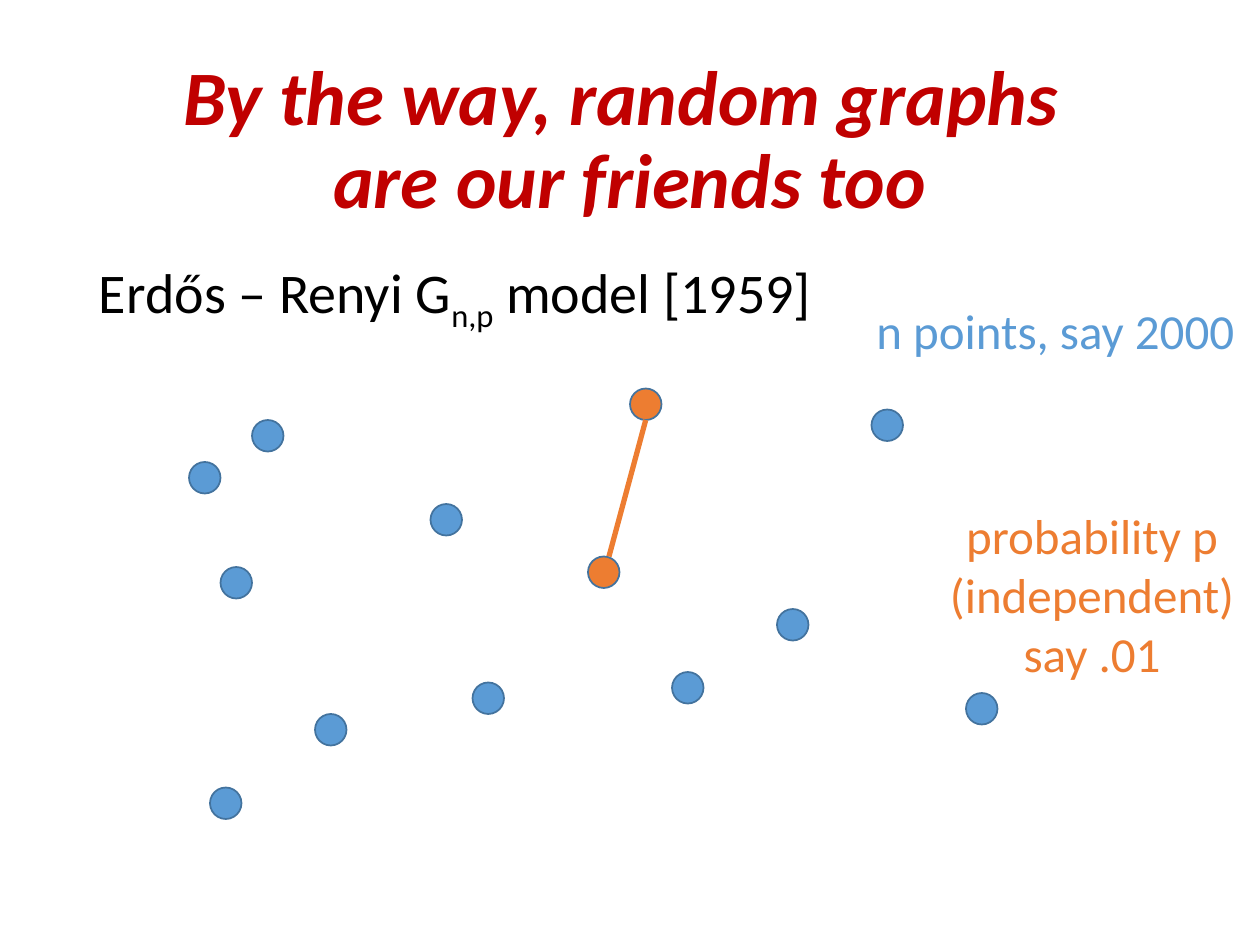
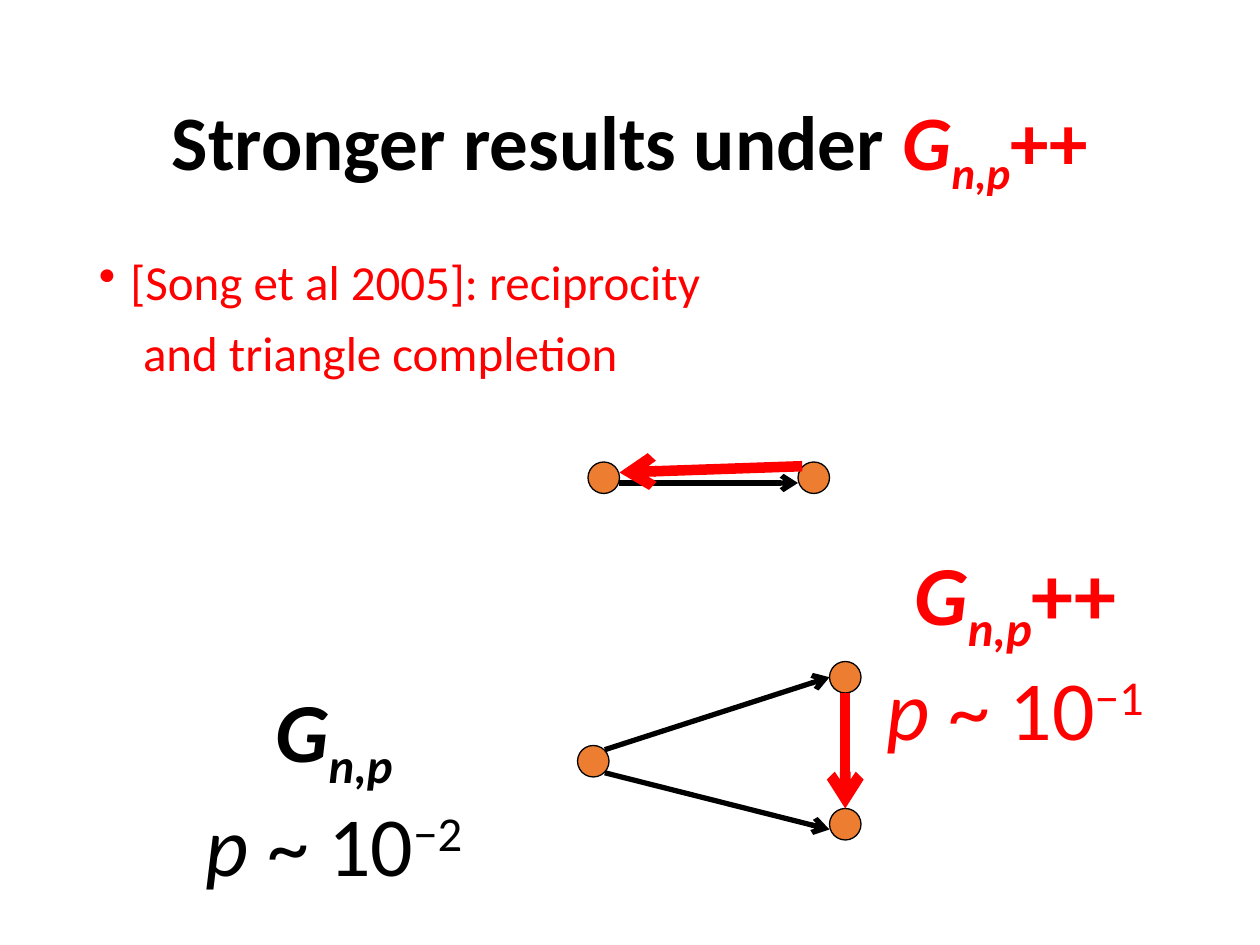
from dataclasses import dataclass

from lxml import etree
from pptx import Presentation
from pptx.dml.color import RGBColor
from pptx.enum.shapes import MSO_CONNECTOR, MSO_SHAPE
from pptx.enum.text import MSO_ANCHOR, MSO_AUTO_SIZE, PP_ALIGN
from pptx.oxml.ns import qn
from pptx.util import Inches, Pt

LINE, OVAL = MSO_CONNECTOR.STRAIGHT, MSO_SHAPE.OVAL
CENTER, LEFT = PP_ALIGN.CENTER, PP_ALIGN.LEFT
MIDDLE, TOP = MSO_ANCHOR.MIDDLE, MSO_ANCHOR.TOP
NO_FIT = MSO_AUTO_SIZE.NONE
TITLE_ONLY = 5
COLS, ROWS = 120, 90
CELL = Inches(10) // COLS
DOT = 3
SUB, SUPER = -25, 30


@dataclass(frozen=True)
class Theme:
    """Colours, font and type sizes of the deck."""
    font: str = "Calibri"
    black: str = "000000"
    red: str = "FF0000"
    dark_red: str = "C00000"
    blue: str = "5B9BD5"
    blue_edge: str = "43739E"
    orange: str = "ED7D31"
    title: int = 44
    formula: int = 48
    lead: int = 32
    text: int = 28


@dataclass(frozen=True)
class Box:
    """A region of the slide, measured in grid columns and rows."""
    col: float
    row: float
    cols: float
    rows: float

    def point(self, col, row):
        """Return the slide position of a grid point inside the box."""
        return round((self.col + col) * CELL), round((self.row + row) * CELL)

    def frame(self):
        """Return left, top, width and height for a shape."""
        return (*self.point(0, 0), round(self.cols * CELL), round(self.rows * CELL))


T = Theme()
TITLE = Box(8.25, 4.8, 103.5, 17.4)
BODY = Box(8.25, 24, 103.5, 57)


def rgb(value):
    """Turn a hex string into a colour."""
    return RGBColor.from_string(value)


def add_runs(p, runs):
    """Add runs given as text and a dict of what differs from the paragraph."""
    for text, look in runs:
        r = p.add_run()
        r.text = text
        if "bold" in look:
            r.font.bold = look["bold"]
        if "italic" in look:
            r.font.italic = look["italic"]
        if "color" in look:
            r.font.color.rgb = rgb(look["color"])
        if "base" in look:
            r.font._element.set("baseline", str(look["base"] * 1000))


def format_paragraph(p, size, color, align=LEFT, bold=False, italic=False):
    """Set the alignment and common font of a paragraph."""
    p.alignment = align
    font = p.font
    font.name, font.size, font.bold, font.italic = T.font, Pt(size), bold, italic
    font.color.rgb = rgb(color)


def add_text(s, box, paragraphs, size, color, align=CENTER, wrap=True):
    """Add a text box with one list of runs per paragraph and return the paragraphs."""
    tf = s.shapes.add_textbox(*box.frame()).text_frame
    tf.word_wrap, tf.auto_size, tf.vertical_anchor = wrap, NO_FIT, TOP
    for i, runs in enumerate(paragraphs):
        p = tf.add_paragraph() if i else tf.paragraphs[0]
        format_paragraph(p, size, color, align)
        add_runs(p, runs)
    return tf.paragraphs


def add_title(s, lines, color, italic=False):
    """Place the title placeholder and fill it with lines of runs."""
    sp = s.shapes.title
    sp.left, sp.top, sp.width, sp.height = TITLE.frame()
    tf = sp.text_frame
    tf.auto_size, tf.vertical_anchor = NO_FIT, MIDDLE
    p = tf.paragraphs[0]
    format_paragraph(p, T.title, color, CENTER, True, italic)
    p.line_spacing = 0.9
    for i, runs in enumerate(lines):
        if i:
            p.add_line_break()
        add_runs(p, runs)


def add_body(s, paragraphs, size, color):
    """Add the body text below the title."""
    ps = add_text(s, BODY, paragraphs, size, color, LEFT)
    for p in ps:
        p.line_spacing, p.space_before = 0.9, Pt(10)
    return ps


def add_dots(s, box, spots, fill, edge, width):
    """Draw the points of a graph at grid spots inside the box."""
    for col, row in spots:
        sp = s.shapes.add_shape(OVAL, *box.point(col, row), DOT * CELL, DOT * CELL)
        sp.shadow.inherit = False
        sp.fill.solid()
        sp.fill.fore_color.rgb = rgb(fill)
        sp.line.color.rgb = rgb(edge)
        sp.line.width = Pt(width)


def add_edge(s, box, start, end, color, width, arrow=True):
    """Draw an edge of a graph between two grid points inside the box."""
    cx = s.shapes.add_connector(LINE, *box.point(*start), *box.point(*end))
    cx.line.color.rgb = rgb(color)
    cx.line.width = Pt(width)
    if arrow:
        etree.SubElement(cx.line._get_or_add_ln(), qn("a:tailEnd"), type="arrow")
    etree.SubElement(cx._element.spPr, qn("a:effectLst"))


def set_indent(p, margin, first=0, bullet=None):
    """Indent a paragraph and give it an optional bullet."""
    pPr = p._p.get_or_add_pPr()
    pPr.set("marL", str(Inches(margin)))
    pPr.set("indent", str(Inches(first)))
    if bullet:
        mark = etree.Element(qn("a:buChar"), char=bullet)
        pPr.find(qn("a:defRPr")).addprevious(mark)


def gnp(plus=""):
    """Return the runs of the bold model name."""
    look = {"bold": True, "italic": True}
    runs = [("G", look), ("n,p", {**look, "base": SUB})]
    return runs + [(plus, {"bold": True, "italic": False})] if plus else runs


def add_model(s, box, plus, exponent, color):
    """Add a model name above its edge probability."""
    chance = [("p ", {"italic": True}), ("~ 10", {}), (exponent, {"base": SUPER})]
    add_text(s, box, [gnp(plus), chance], T.formula, color, wrap=False)


def add_random_graph(s, box):
    """Draw scattered points with one edge between two of them."""
    points = [(0, 7), (2, 38), (23, 11), (6, 3), (3, 17), (46, 27), (12, 31),
              (27, 28), (56, 21), (74, 29), (65, 2)]
    add_dots(s, box, points, T.blue, T.blue_edge, 1)
    add_dots(s, box, [(38, 16), (42, 0)], T.orange, T.blue_edge, 1)
    add_edge(s, box, (40, 16), (43.5, 3), T.orange, 3, arrow=False)


def add_reciprocity(s, box):
    """Draw two points with an edge and its answer."""
    add_dots(s, box, [(0, 0), (20, 0)], T.orange, T.black, 0.75)
    add_edge(s, box, (3, 2), (20, 2), T.black, 3)
    add_edge(s, box, (20.4, 0.4), (3, 1), T.red, 6)


def add_triangle(s, box):
    """Draw three points whose third edge completes a triangle."""
    add_dots(s, box, [(0, 8), (24, 14), (24, 0)], T.orange, T.black, 0.75)
    add_edge(s, box, (2.6, 8.4), (24, 1.5), T.black, 3)
    add_edge(s, box, (2.6, 10.6), (24, 16), T.black, 3)
    add_edge(s, box, (25.5, 3), (25.5, 14), T.red, 6)


def random_graphs_slide(prs):
    """Build the slide on the random graph model."""
    s = prs.slides.add_slide(prs.slide_layouts[TITLE_ONLY])
    add_title(s, [[("By the way, random graphs ", {})], [("are our friends too", {})]],
              T.dark_red, italic=True)
    add_body(s, [[("Erdős – Renyi G", {}), ("n,p", {"base": SUB}), (" model [1959]", {})]],
             T.lead, T.black)
    add_random_graph(s, Box(18, 37, 77, 41))
    add_text(s, Box(82, 28, 37, 7), [[("n points, say 2000", {})]],
             T.text, T.blue, wrap=False)
    notes = ("probability p", "(independent)", "say .01")
    add_text(s, Box(88, 47.6, 32, 18), [[(note, {})] for note in notes], T.text, T.orange)


def stronger_results_slide(prs):
    """Build the slide on reciprocity and triangle completion."""
    s = prs.slides.add_slide(prs.slide_layouts[TITLE_ONLY])
    model = [(text, {**look, "color": T.red}) for text, look in gnp("++")]
    add_title(s, [[("Stronger results under ", {})] + model], T.black)
    first, second = add_body(s, [[("[Song et al 2005]: reciprocity", {})],
                                 [("and triangle completion", {})]], T.text, T.red)
    set_indent(first, 0.25, -0.25, "•")
    set_indent(second, 0.35)
    add_reciprocity(s, Box(56, 44, 23, 3))
    add_triangle(s, Box(55, 63, 27, 17))
    add_model(s, Box(82.5, 51, 28.4, 20.6), "++", "−1", T.red)
    add_model(s, Box(17.6, 64, 28.4, 20.6), "", "−2", T.black)


def main():
    """Build and save the deck."""
    prs = Presentation()
    prs.slide_width, prs.slide_height = COLS * CELL, ROWS * CELL
    random_graphs_slide(prs)
    stronger_results_slide(prs)
    prs.save("out.pptx")


if __name__ == "__main__":
    main()
